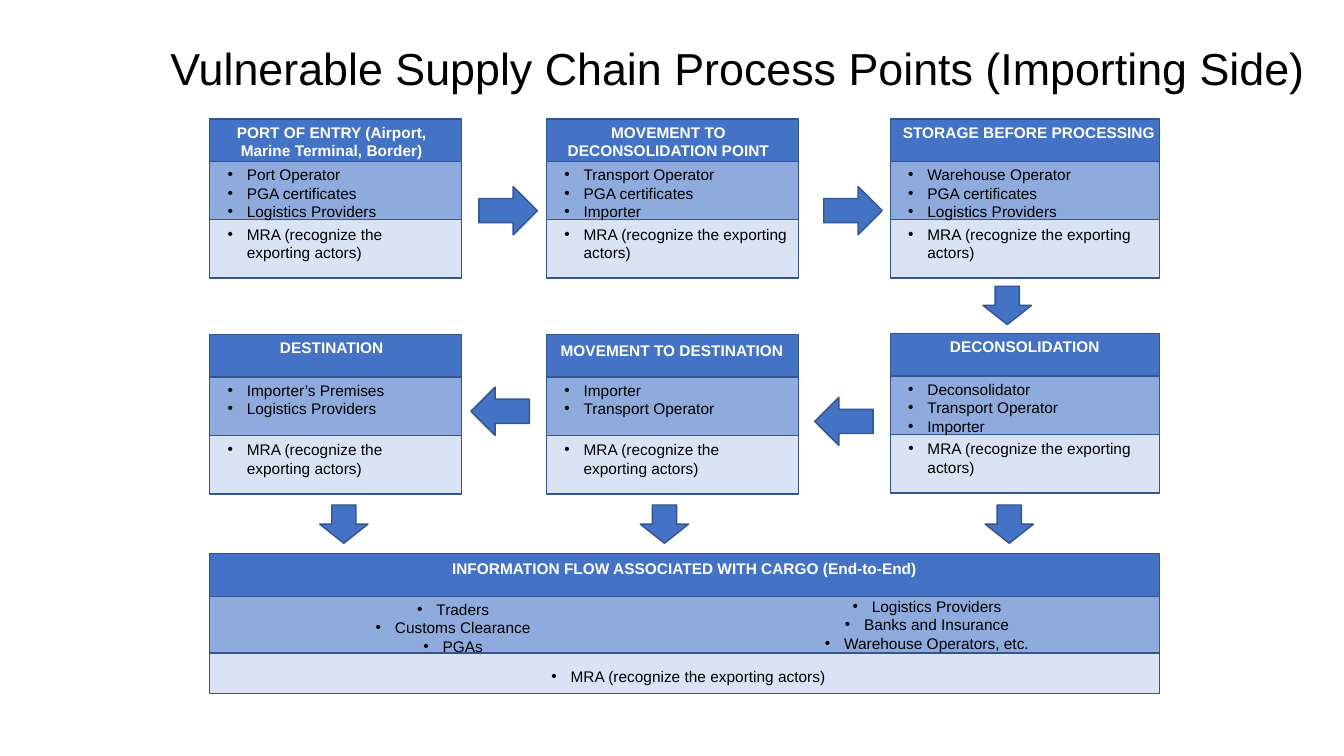
import pptx
import pptx.util
import pptx.dml.color
import pptx.enum.shapes
import pptx.enum.text
from lxml import etree

Inches = pptx.util.Inches
Pt = pptx.util.Pt
ALIGN = pptx.enum.text.PP_ALIGN
SHAPES = pptx.enum.shapes.MSO_SHAPE

COLORS = {
    "header": "4472C4", "actors": "8FAADC", "recognition": "DAE3F3",
    "outline": "325491", "text": "000000", "header text": "FFFFFF",
}
BODY_FORMAT = {"name": "Arial", "size": Pt(11), "bold": False}
HEADER_FORMAT = {**BODY_FORMAT, "bold": True}
TITLE_FORMAT = {**BODY_FORMAT, "size": Pt(32)}

TITLE = "Vulnerable Supply Chain Process Points (Importing Side)"
RECOGNITION = "MRA (recognize the exporting actors)"
COLUMNS = [(2.08, 2.5), (5.42, 2.5), (8.83, 2.67)]  # left, width
BODY_INSET = 0.08
BULLET_INDENT = Inches(0.19)

# column, top, heading, heading box (dx, dy, width), actors, recognition width
STAGES = [
    (0, 1.18, "PORT OF ENTRY (Airport, Marine Terminal, Border)", (0, -0.01, 2.42),
     ["Port Operator", "PGA certificates", "Logistics Providers"], 2.33),
    (1, 1.18, "MOVEMENT TO DECONSOLIDATION POINT", (0, -0.01, 2.42),
     ["Transport Operator", "PGA certificates", "Importer"], 2.42),
    (2, 1.18, "STORAGE BEFORE PROCESSING", (0, -0.01, 2.75),
     ["Warehouse Operator", "PGA certificates", "Logistics Providers"], 2.5),
    (2, 3.31, "DECONSOLIDATION", (0, -0.02, 2.67),
     ["Deconsolidator", "Transport Operator", "Importer"], 2.42),
    (1, 3.32, "MOVEMENT TO DESTINATION", (-0.09, 0.01, 2.67),
     ["Importer", "Transport Operator"], 2.25),
    (0, 3.32, "DESTINATION", (0, -0.01, 2.42),
     ["Importer’s Premises", "Logistics Providers"], 2.25),
]

# left, top, rotation
SIDE_ARROWS = [(4.75, 1.85, 0), (8.17, 1.85, 0), (8.08, 3.94, 180), (4.67, 3.84, 180)]
DOWN_ARROWS = [(9.8, 2.79, 90), (3.22, 4.96, 90), (6.4, 4.96, 90), (9.82, 4.96, 90)]


def rgb(name):
    return pptx.dml.color.RGBColor.from_string(COLORS[name])


def format_font(font, values, color):
    for attribute, value in values.items():
        setattr(font, attribute, value)
    font.color.rgb = rgb(color)


def add_filled(slide, kind, box, color):
    shape = slide.shapes.add_shape(kind, *map(Inches, box))
    shape.shadow.inherit = False
    shape.fill.solid()
    shape.fill.fore_color.rgb = rgb(color)
    shape.line.color.rgb = rgb("outline")
    shape.line.width = Pt(1)
    return shape


def add_bullet(paragraph):
    properties = paragraph._p.get_or_add_pPr()
    properties.set("marL", str(BULLET_INDENT))
    properties.set("indent", str(-BULLET_INDENT))
    for tag, key, value in (("a:buFont", "typeface", "Arial"), ("a:buChar", "char", "•")):
        etree.SubElement(properties, pptx.oxml.ns.qn(tag)).set(key, value)


def add_text(slide, box, lines, align, heading=False):
    frame = slide.shapes.add_textbox(*map(Inches, box)).text_frame
    frame.word_wrap = True
    for index, line in enumerate(lines):
        paragraph = frame.add_paragraph() if index else frame.paragraphs[0]
        paragraph.alignment = align
        if not heading:
            add_bullet(paragraph)
        run = paragraph.add_run()
        run.text = line
        if heading:
            format_font(run.font, HEADER_FORMAT, "header text")
        else:
            format_font(run.font, BODY_FORMAT, "text")


def add_bands(slide, left, top, width, bands):
    """Stack the header, actors and recognition bands, each given as (offset, height)."""
    for color, (offset, height) in zip(("header", "actors", "recognition"), bands):
        add_filled(slide, SHAPES.RECTANGLE, (left, top + offset, width, height), color)


def add_title(slide, box):
    title = slide.shapes.title
    for attribute, value in zip(("left", "top", "width", "height"), box):
        setattr(title, attribute, Inches(value))
    frame = title.text_frame
    frame.text = TITLE
    frame.word_wrap = True
    frame.auto_size = pptx.enum.text.MSO_AUTO_SIZE.NONE
    frame.vertical_anchor = pptx.enum.text.MSO_ANCHOR.MIDDLE
    paragraph = frame.paragraphs[0]
    paragraph.alignment = ALIGN.LEFT
    paragraph.line_spacing = 0.9
    format_font(paragraph.runs[0].font, TITLE_FORMAT, "text")


def add_stage(slide, column, top, heading, heading_box, actors, recognition_width):
    left, width = COLUMNS[column]
    add_bands(slide, left, top, width, [(0, 0.45), (0.42, 0.58), (1, 0.58)])
    shift, rise, heading_width = heading_box
    add_text(slide, (left + shift, top + rise, heading_width, 0.29), [heading],
             ALIGN.CENTER, heading=True)
    inner = left + BODY_INSET
    add_text(slide, (inner, top + 0.41, 2.2, 0.66), actors, ALIGN.LEFT)
    add_text(slide, (inner, top + 1, recognition_width, 0.47), [RECOGNITION], ALIGN.LEFT)


def add_information_flow(slide, left, top, width):
    add_bands(slide, left, top, width, [(0, 0.45), (0.43, 0.58), (0.99, 0.4)])
    add_text(slide, (left, top + 0.01, width, 0.29),
             ["INFORMATION FLOW ASSOCIATED WITH CARGO (End-to-End)"],
             ALIGN.CENTER, heading=True)
    inner = left + BODY_INSET
    half = 4.67
    add_text(slide, (inner, top + 0.41, half, 0.66),
             ["Traders", "Customs Clearance", "PGAs"], ALIGN.CENTER)
    add_text(slide, (inner + half + 0.03, top + 0.38, half, 0.66),
             ["Logistics Providers", "Banks and Insurance", "Warehouse Operators, etc."],
             ALIGN.CENTER)
    add_text(slide, (inner, top + 1.08, width - BODY_INSET, 0.29), [RECOGNITION],
             ALIGN.CENTER)


def add_arrows(slide, arrows, length):
    for left, top, rotation in arrows:
        arrow = add_filled(slide, SHAPES.RIGHT_ARROW, (left, top, length, 0.48), "header")
        arrow.rotation = rotation


def main():
    presentation = pptx.Presentation()
    presentation.slide_width = Inches(13.33)
    presentation.slide_height = Inches(7.5)
    slide = presentation.slides.add_slide(presentation.slide_layouts[5])
    add_title(slide, (1.59, 0.4, 11.64, 0.6))
    for stage in STAGES:
        add_stage(slide, *stage)
    add_information_flow(slide, 2.08, 5.49, 9.42)
    add_arrows(slide, SIDE_ARROWS, 0.58)
    add_arrows(slide, DOWN_ARROWS, 0.38)
    presentation.save("out.pptx")


if __name__ == "__main__":
    main()
